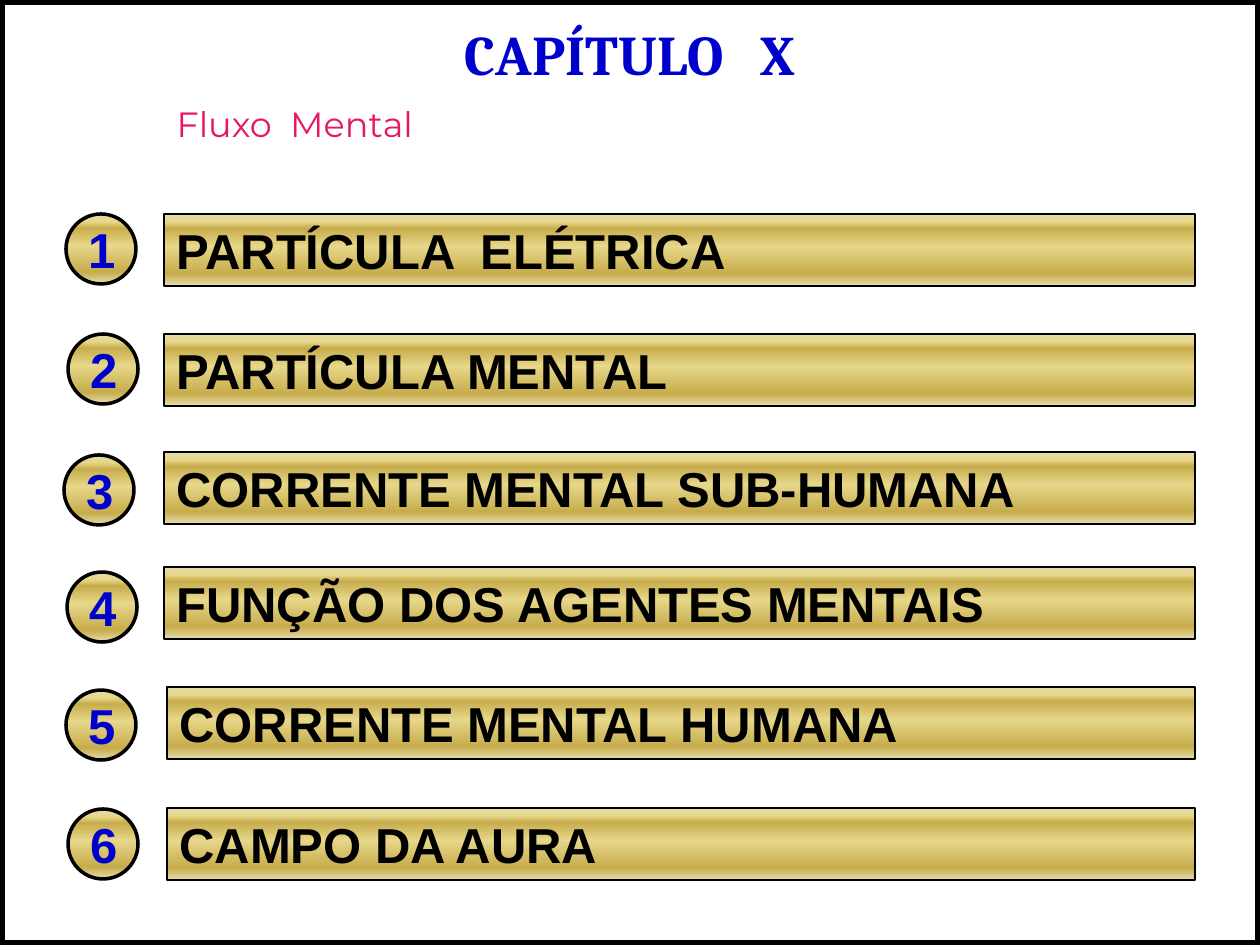
from lxml.etree import SubElement
from pptx import Presentation
from pptx.dml.color import RGBColor
from pptx.enum.shapes import MSO_SHAPE
from pptx.enum.text import MSO_ANCHOR, MSO_AUTO_SIZE, PP_ALIGN
from pptx.oxml.ns import qn
from pptx.util import Emu, Pt

# Content
TITLE = "CAPÍTULO   X"
SUBTITLE = "Fluxo  Mental"
# topic, bar left, bar top, circle left, circle top (px)
TOPICS = [
    ("PARTÍCULA  ELÉTRICA", 164, 214, 66, 214),
    ("PARTÍCULA MENTAL", 164, 334, 68, 334),
    ("CORRENTE MENTAL SUB-HUMANA", 164, 452, 64, 455),
    ("FUNÇÃO DOS AGENTES MENTAIS", 164, 567, 67, 572),
    ("CORRENTE MENTAL HUMANA", 167, 687, 66, 690),
    ("CAMPO DA AURA", 167, 808, 68, 809),
]

# Sizes in px
SLIDE_WIDTH, SLIDE_HEIGHT = 1260, 945
BAR_RIGHT, BAR_HEIGHT, CIRCLE_SIZE = 1195, 72, 70

# Colours
BLACK = RGBColor(0x00, 0x00, 0x00)
BLUE = RGBColor(0x00, 0x00, 0xCC)
PINK = RGBColor(0xE8, 0x17, 0x66)
PALE_GOLD = RGBColor(0xE6, 0xDC, 0xAC)
LIGHT_GOLD = RGBColor(0xE6, 0xD7, 0x8A)
DARK_GOLD = RGBColor(0xC7, 0xAC, 0x4C)
GOLD_STOPS = [(0, PALE_GOLD), (11, LIGHT_GOLD), (20, DARK_GOLD),
              (45, LIGHT_GOLD), (83, DARK_GOLD), (100, PALE_GOLD)]

# Text formats
TITLE_FONT = {"name": "Cambria", "size": Pt(32), "bold": True}
SUBTITLE_FONT = {"name": "Montserrat", "size": Pt(20), "bold": False}
TOPIC_FONT = {"name": "Arial", "size": Pt(28), "bold": True}


def px(length):
    return Emu(round(length * 914400 / 126))


def place(shape, left, top, width, height):
    box = {"left": left, "top": top, "width": width, "height": height}
    for name, length in box.items():
        setattr(shape, name, px(length))


def write(shape, text, font, color, alignment, anchor):
    frame = shape.text_frame
    frame.text = text
    frame.word_wrap = True
    frame.auto_size = MSO_AUTO_SIZE.NONE
    frame.vertical_anchor = anchor
    paragraph = frame.paragraphs[0]
    paragraph.alignment = alignment
    paragraph.space_before = Pt(0)
    run_font = paragraph.runs[0].font
    for name, value in font.items():
        setattr(run_font, name, value)
    run_font.color.rgb = color


def add_outlined(slide, kind, box, line_width):
    shape = slide.shapes.add_shape(kind, *map(px, box))
    shape.shadow.inherit = False
    shape.fill.background()
    shape.line.color.rgb = BLACK
    shape.line.width = Pt(line_width)
    return shape


def fill_gold(shape):
    shape.fill.gradient()
    shape.fill.gradient_angle = 270
    stops = shape.element.spPr.find(".//" + qn("a:gsLst"))
    stops.clear()
    for percent, color in GOLD_STOPS:
        stop = SubElement(stops, qn("a:gs"), pos=str(percent * 1000))
        SubElement(stop, qn("a:srgbClr"), val=str(color))


def main():
    presentation = Presentation()
    presentation.slide_width = px(SLIDE_WIDTH)
    presentation.slide_height = px(SLIDE_HEIGHT)
    slide = presentation.slides.add_slide(presentation.slide_layouts[0])

    # Frame around the slide
    add_outlined(slide, MSO_SHAPE.RECTANGLE, (0, 0, SLIDE_WIDTH, SLIDE_HEIGHT), 6)

    # Title and subtitle
    title, subtitle = slide.placeholders
    place(title, 15, 13, 1230, 81)
    write(title, TITLE, TITLE_FONT, BLUE, PP_ALIGN.CENTER, MSO_ANCHOR.TOP)
    place(subtitle, 164, 96, 1032, 89)
    write(subtitle, SUBTITLE, SUBTITLE_FONT, PINK, PP_ALIGN.LEFT, MSO_ANCHOR.TOP)

    # Numbered topics
    for number, (topic, left, top, circle_left, circle_top) in enumerate(TOPICS, 1):
        bar = add_outlined(slide, MSO_SHAPE.RECTANGLE,
                           (left, top, BAR_RIGHT - left, BAR_HEIGHT), 1.5)
        fill_gold(bar)
        write(bar, topic, TOPIC_FONT, BLACK, PP_ALIGN.LEFT, MSO_ANCHOR.TOP)

        circle = add_outlined(slide, MSO_SHAPE.OVAL,
                              (circle_left, circle_top, CIRCLE_SIZE, CIRCLE_SIZE), 2)
        fill_gold(circle)
        write(circle, str(number), TOPIC_FONT, BLUE, PP_ALIGN.CENTER, MSO_ANCHOR.MIDDLE)

    presentation.save("out.pptx")


if __name__ == "__main__":
    main()
